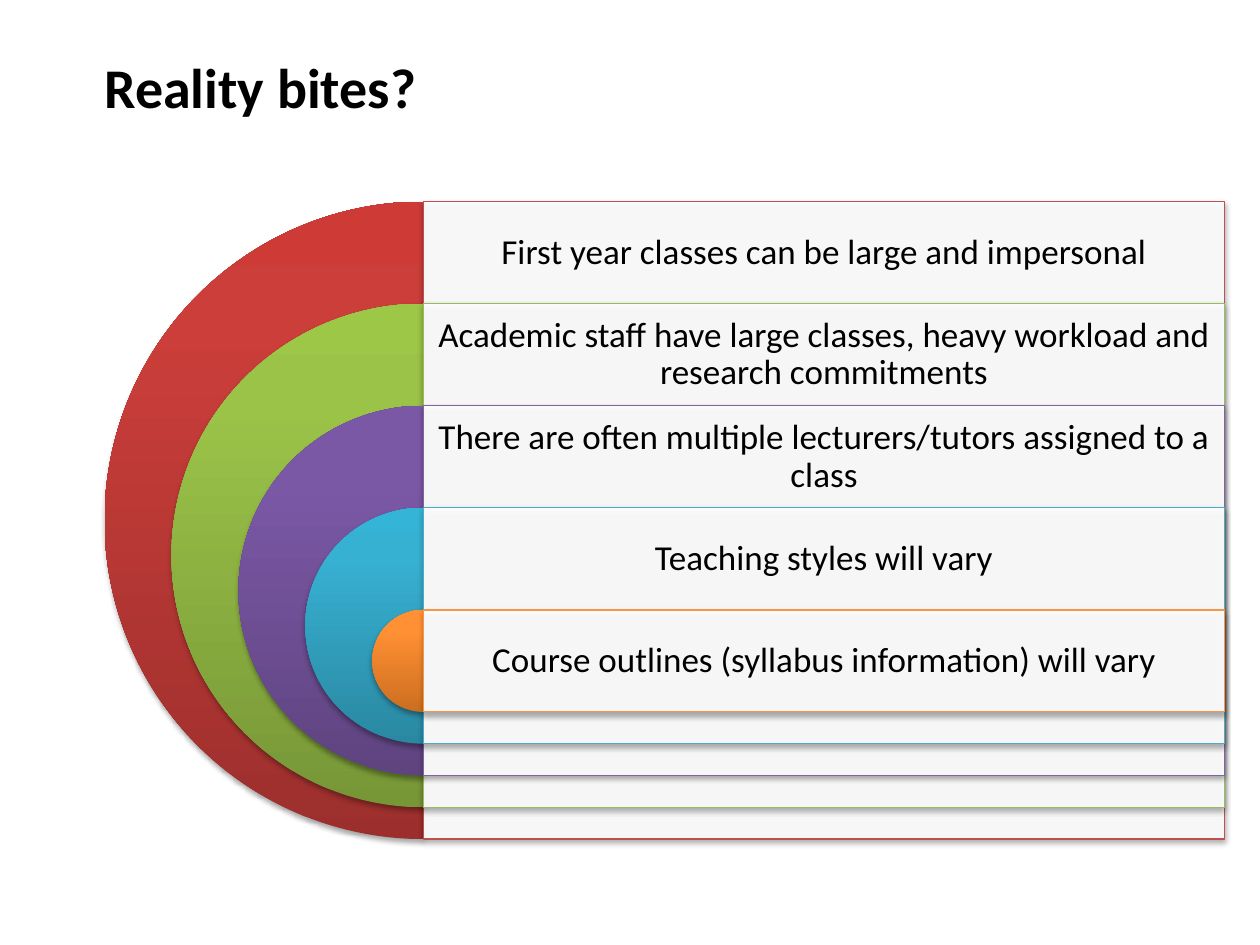
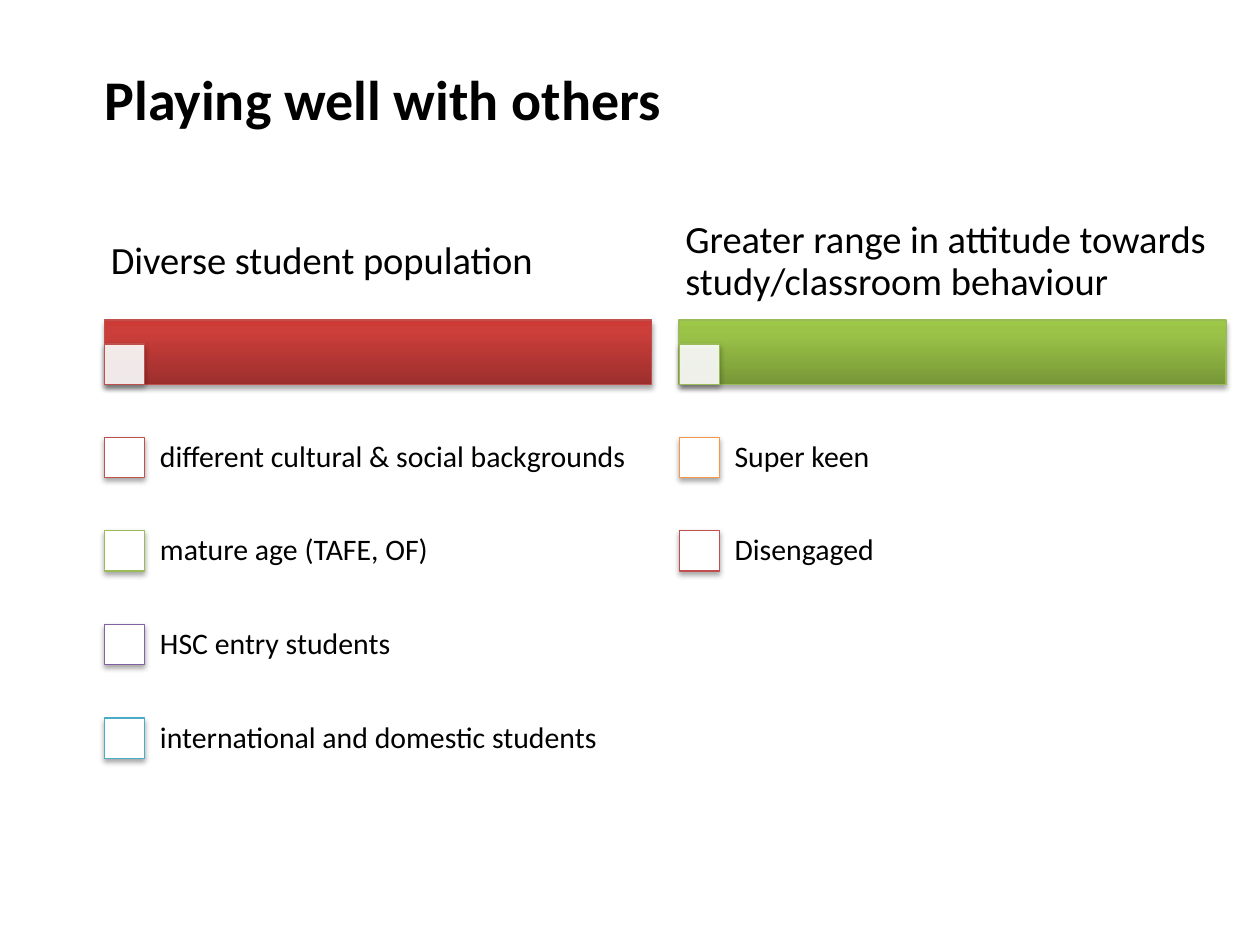
from copy import deepcopy

from lxml import etree
from pptx import Presentation
from pptx.dml.color import RGBColor
from pptx.enum import shapes, text
from pptx.oxml import ns
from pptx.util import Inches, Pt

FONT = "Calibri"
BLACK, WHITE = "000000", "FFFFFF"
LINES = {"red": "C0504D", "green": "9BBB59", "purple": "8064A2",
         "blue": "4BACC6", "orange": "F79646"}
GRADIENTS = {"red": ("9C2F2D", "CB3E3A", "CE3B37"),
             "green": ("779737", "9BC348", "9DC746"),
             "purple": ("5F4480", "7B58A6", "7C57A8"),
             "blue": ("2A88A2", "37B1D2", "34B4D6"),
             "orange": ("CC6E20", "FF9034", "FF9136")}
STOPS = (0, 0.8, 1)
LEFT = 0.83

REALITIES = [
    ("red", "First year classes can be large and impersonal"),
    ("green", "Academic staff have large classes, heavy workload and research commitments"),
    ("purple", "There are often multiple lecturers/tutors assigned to a class"),
    ("blue", "Teaching styles will vary"),
    ("orange", "Course outlines (syllabus information) will vary"),
]
GROUPS = [
    ("red", "Diverse student population", [
        ("red", "different cultural & social backgrounds"),
        ("green", "mature age (TAFE, OF)"),
        ("purple", "HSC entry students"),
        ("blue", "international and domestic students")]),
    ("green", "Greater range in attitude towards study/classroom behaviour", [
        ("orange", "Super keen"),
        ("red", "Disengaged")]),
]


def rgb(value):
    return RGBColor.from_string(value)


class Deck:
    """Holds the shared style and the slide being filled."""

    def __init__(self):
        self.prs = Presentation()
        self.prs.slide_width, self.prs.slide_height = Inches(10), Inches(7.5)
        self.slide = None

    def new_slide(self, title, top):
        self.slide = self.prs.slides.add_slide(self.prs.slide_layouts[6])
        self.label(title, (LEFT, top, 8.34, 1), 32, bold=True,
                   anchor=text.MSO_ANCHOR.TOP, spacing=1)

    def label(self, words, box, size, margins=(0, 0), bold=False, spacing=0.9,
              align=text.PP_ALIGN.LEFT, anchor=text.MSO_ANCHOR.MIDDLE):
        frame = self.slide.shapes.add_textbox(*map(Inches, box)).text_frame
        frame.word_wrap = True
        frame.vertical_anchor = anchor
        frame.margin_left = frame.margin_right = Inches(margins[0])
        frame.margin_top = frame.margin_bottom = Inches(margins[1])
        paragraph = frame.paragraphs[0]
        paragraph.text = words
        paragraph.alignment = align
        paragraph.line_spacing = spacing
        font = paragraph.font
        font.name, font.size, font.bold = FONT, Pt(size), bold
        font.color.rgb = rgb(BLACK)

    def shadowed(self, kind, box, line=None):
        shape = self.slide.shapes.add_shape(kind, *map(Inches, box))
        shape.shadow.inherit = False
        if line:
            shape.line.color.rgb = rgb(line)
            shape.line.width = Pt(0.75)
        else:
            shape.line.fill.background()
        effects = shape._element.spPr.find(ns.qn("a:effectLst"))
        shadow = etree.SubElement(
            effects, ns.qn("a:outerShdw"), blurRad=str(Pt(3.1)),
            dist=str(Pt(1.8)), dir="5400000", rotWithShape="0")
        tint = etree.SubElement(shadow, ns.qn("a:srgbClr"), val=BLACK)
        etree.SubElement(tint, ns.qn("a:alpha"), val="35000")
        return shape

    def shade(self, shape, colour):
        shape.fill.gradient()
        shape.fill.gradient_angle = 90
        stop_list = shape._element.spPr.find(".//" + ns.qn("a:gsLst"))
        stop_list.append(deepcopy(stop_list[0]))
        for stop, value, position in zip(shape.fill.gradient_stops,
                                         GRADIENTS[colour], STOPS):
            stop.color.rgb = rgb(value)
            stop.position = position

    def half_disc(self, box, colour):
        pie = self.shadowed(shapes.MSO_SHAPE.PIE, box)
        pie.adjustments[0], pie.adjustments[1] = 54, 162
        self.shade(pie, colour)

    def bar(self, box, colour):
        self.shade(self.shadowed(shapes.MSO_SHAPE.RECTANGLE, box, LINES[colour]), colour)

    def panel(self, box, colour, opacity=100):
        panel = self.shadowed(shapes.MSO_SHAPE.RECTANGLE, box, LINES[colour])
        panel.fill.solid()
        panel.fill.fore_color.rgb = rgb(WHITE)
        if opacity < 100:
            tint = panel._element.spPr.find(ns.qn("a:solidFill"))[0]
            etree.SubElement(tint, ns.qn("a:alpha"), val=str(opacity * 1000))


def reality_slide(deck):
    deck.new_slide("Reality bites?", 0.42)
    centre, top, width, band = 3.36, 1.6, 6.36, 0.81
    outer = 5.06
    shrink = (outer - band) / (len(REALITIES) - 1)
    for i, (colour, words) in enumerate(REALITIES):
        size, y = outer - i * shrink, top + i * band
        deck.half_disc((centre - size / 2, y, size, size), colour)
        deck.panel((centre, y, width, size), colour, opacity=90)
        deck.label(words, (centre, y, width, band), 20, (0.08, 0.08),
                   align=text.PP_ALIGN.CENTER)


def others_slide(deck):
    deck.new_slide("Playing well with others", 0.51)
    width, box, row = 4.34, 0.32, 0.743
    for column, (colour, heading, items) in enumerate(GROUPS):
        x = LEFT + column * 4.56
        deck.bar((x, 2.54, width, 0.51), colour)
        deck.panel((x, 2.73, box, box), colour, opacity=90)
        deck.label(heading, (x, 1.62, width, 0.92), 22, (0.05, 0.03))
        for i, (edge, words) in enumerate(items):
            y = 3.26 + i * row
            deck.panel((x, y + 0.21, box, box), edge)
            deck.label(words, (x + 0.31, y, 4.03, row), 17, (0.13, 0.13))


def main():
    deck = Deck()
    reality_slide(deck)
    others_slide(deck)
    deck.prs.save("out.pptx")


if __name__ == "__main__":
    main()
